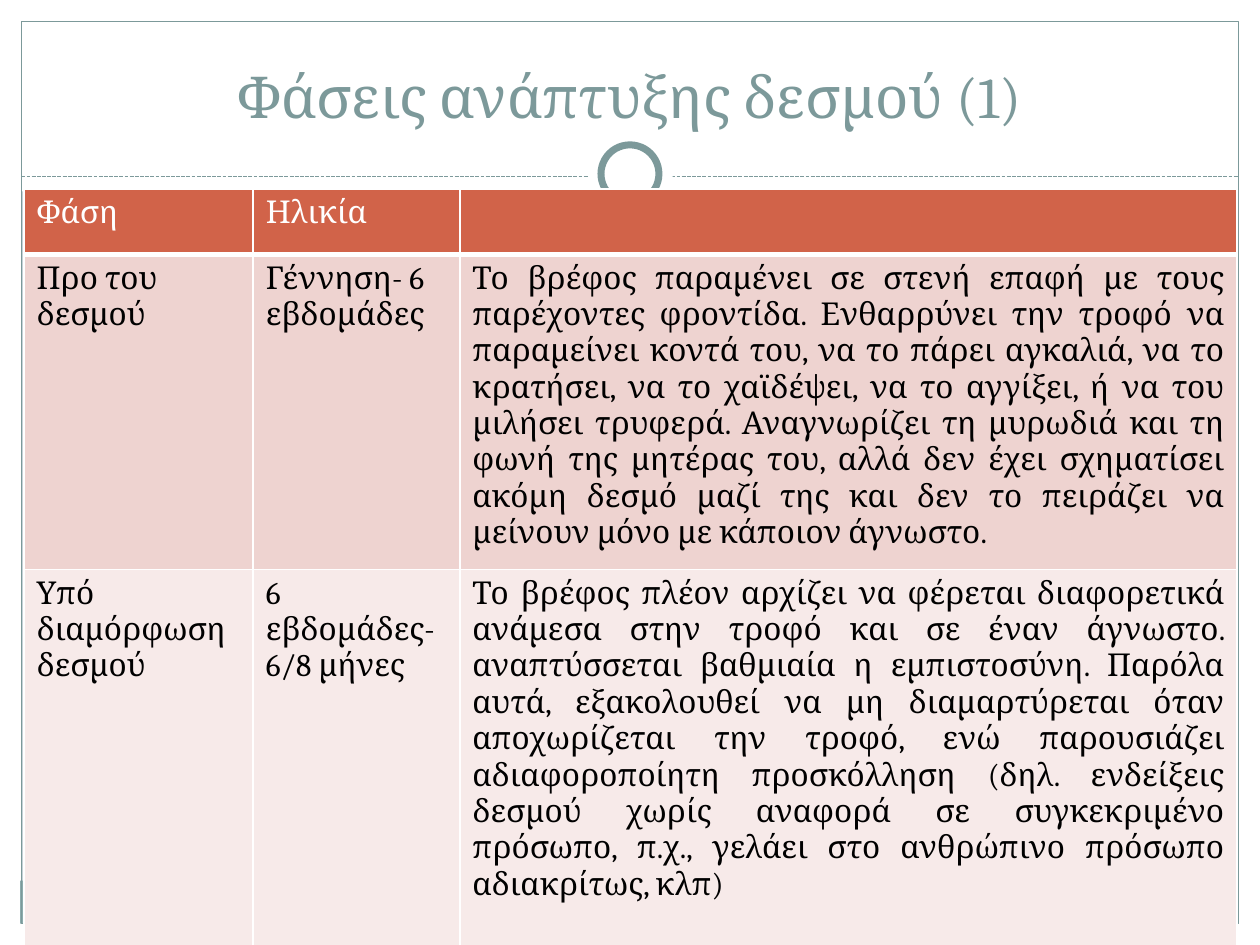
from lxml import etree
from pptx import Presentation
from pptx.dml.color import RGBColor
from pptx.enum.dml import MSO_LINE
from pptx.enum.shapes import MSO_CONNECTOR, MSO_SHAPE as SHAPE
from pptx.enum.text import MSO_ANCHOR as ANCHOR, PP_ALIGN as ALIGN
from pptx.oxml.ns import qn
from pptx.util import Inches, Pt

COLORS = {
    "background": "C5D1D7", "white": "FFFFFF", "black": "000000",
    "accent": "7C999A", "footer": "8CADAE", "header": "D16349",
    "first": "EED3D0", "second": "F7EAE9",
}
FONT = "Cambria"


def rgb(name):
    return RGBColor.from_string(COLORS[name])


class SlideBuilder:
    def __init__(self, slide):
        self.slide = slide
        self.shapes = slide.shapes

    def background(self, color):
        fill = self.slide.background.fill
        fill.solid()
        fill.fore_color.rgb = rgb(color)

    def shape(self, kind, box, fill=None, line=None, width=0.75):
        item = self.shapes.add_shape(kind, *map(Inches, box))
        item.shadow.inherit = False
        if fill:
            item.fill.solid()
            item.fill.fore_color.rgb = rgb(fill)
        else:
            item.fill.background()
        if line:
            item.line.color.rgb = rgb(line)
            item.line.width = Pt(width)
        else:
            item.line.fill.background()

    def dashed_line(self, start, end, color):
        rule = self.shapes.add_connector(
            MSO_CONNECTOR.STRAIGHT, *map(Inches, start + end))
        rule.line.color.rgb = rgb(color)
        rule.line.width = Pt(0.75)
        rule.line.dash_style = MSO_LINE.SQUARE_DOT
        etree.SubElement(rule._element.spPr, qn("a:effectLst"))

    def set_text(self, frame, text, size, color, align):
        paragraph = frame.paragraphs[0]
        paragraph.text = text
        paragraph.alignment = align
        paragraph.font.name = FONT
        paragraph.font.size = Pt(size)
        paragraph.font.bold = False
        paragraph.font.color.rgb = rgb(color)

    def title(self, box, text):
        frame = self.shapes.add_textbox(*map(Inches, box)).text_frame
        frame.word_wrap = True
        frame.vertical_anchor = ANCHOR.BOTTOM
        self.set_text(frame, text, 33, "accent", ALIGN.CENTER)

    def borders(self, cell, bottom):
        properties = cell._tc.get_or_add_tcPr()
        widths = {"lnL": 1, "lnR": 1, "lnT": 1, "lnB": bottom}
        for index, (side, width) in enumerate(widths.items()):
            edge = etree.Element(qn(f"a:{side}"), w=str(Pt(width)))
            fill = etree.SubElement(edge, qn("a:solidFill"))
            etree.SubElement(fill, qn("a:srgbClr"), val=COLORS["white"])
            properties.insert(index, edge)

    def table(self, box, widths, heights, rows, fills):
        table = self.shapes.add_table(
            len(rows), len(widths), *map(Inches, box)).table
        for column, width in zip(table.columns, widths):
            column.width = Inches(width)
        for row, height in zip(table.rows, heights):
            row.height = Inches(height)
        for r, (texts, fill) in enumerate(zip(rows, fills)):
            for c, text in enumerate(texts):
                cell = table.cell(r, c)
                cell.fill.solid()
                cell.fill.fore_color.rgb = rgb(fill)
                justified = r > 0 and c == 2
                self.set_text(cell.text_frame, text, 18,
                              "black" if r else "white",
                              ALIGN.JUSTIFY if justified else ALIGN.LEFT)
                self.borders(cell, bottom=1 if r else 3)


PHASES = [
    ("Φάση", "Ηλικία", ""),
    ("Προ του δεσμού", "Γέννηση- 6 εβδομάδες",
     "Το βρέφος παραμένει σε στενή επαφή με τους παρέχοντες φροντίδα. "
     "Ενθαρρύνει την τροφό να παραμείνει κοντά του, να το πάρει αγκαλιά, "
     "να το κρατήσει, να το χαϊδέψει, να το αγγίξει, ή να του μιλήσει "
     "τρυφερά. Αναγνωρίζει τη μυρωδιά και τη φωνή της μητέρας του, αλλά "
     "δεν έχει σχηματίσει ακόμη δεσμό μαζί της και δεν το πειράζει να "
     "μείνουν μόνο με κάποιον άγνωστο."),
    ("Υπό διαμόρφωση δεσμού", "6 εβδομάδες- 6/8 μήνες",
     "Το βρέφος πλέον αρχίζει να φέρεται διαφορετικά ανάμεσα στην τροφό "
     "και σε έναν άγνωστο. αναπτύσσεται βαθμιαία η εμπιστοσύνη. Παρόλα "
     "αυτά, εξακολουθεί να μη διαμαρτύρεται όταν αποχωρίζεται την τροφό, "
     "ενώ παρουσιάζει αδιαφοροποίητη προσκόλληση (δηλ. ενδείξεις δεσμού "
     "χωρίς αναφορά σε συγκεκριμένο πρόσωπο, π.χ., γελάει στο ανθρώπινο "
     "πρόσωπο αδιακρίτως, κλπ)"),
]


def main():
    deck = Presentation()
    deck.slide_width, deck.slide_height = Inches(10), Inches(7.5)
    page = SlideBuilder(deck.slides.add_slide(deck.slide_layouts[6]))

    # White margins, footer band and frame
    page.background("background")
    for margin in [(0, 7.33, 10, 0.17), (0, 0, 10, 1.52),
                   (0, 0, 0.17, 7.5), (9.83, 0, 0.17, 7.5)]:
        page.shape(SHAPE.RECTANGLE, margin, "white")
    page.shape(SHAPE.RECTANGLE, (0.16, 6.99, 9.66, 0.34), "footer")
    page.shape(SHAPE.RECTANGLE, (0.17, 0.17, 9.66, 7.16), line="accent")

    # Divider with ring
    page.dashed_line((0.17, 1.4), (9.83, 1.4), "accent")
    page.shape(SHAPE.OVAL, (4.67, 1.05, 0.67, 0.67), "white")
    page.shape(SHAPE.OVAL, (4.77, 1.15, 0.46, 0.46), "white", "accent", 4)

    # Title and table of phases
    page.title((0.33, 0.25, 9.33, 0.83), "Φάσεις ανάπτυξης δεσμού (1)")
    page.table((0.19, 1.5, 9.63, 6), (1.82, 1.64, 6.17), (0.52, 2.4, 3.08),
               PHASES, ("header", "first", "second"))

    deck.save("out.pptx")


if __name__ == "__main__":
    main()
